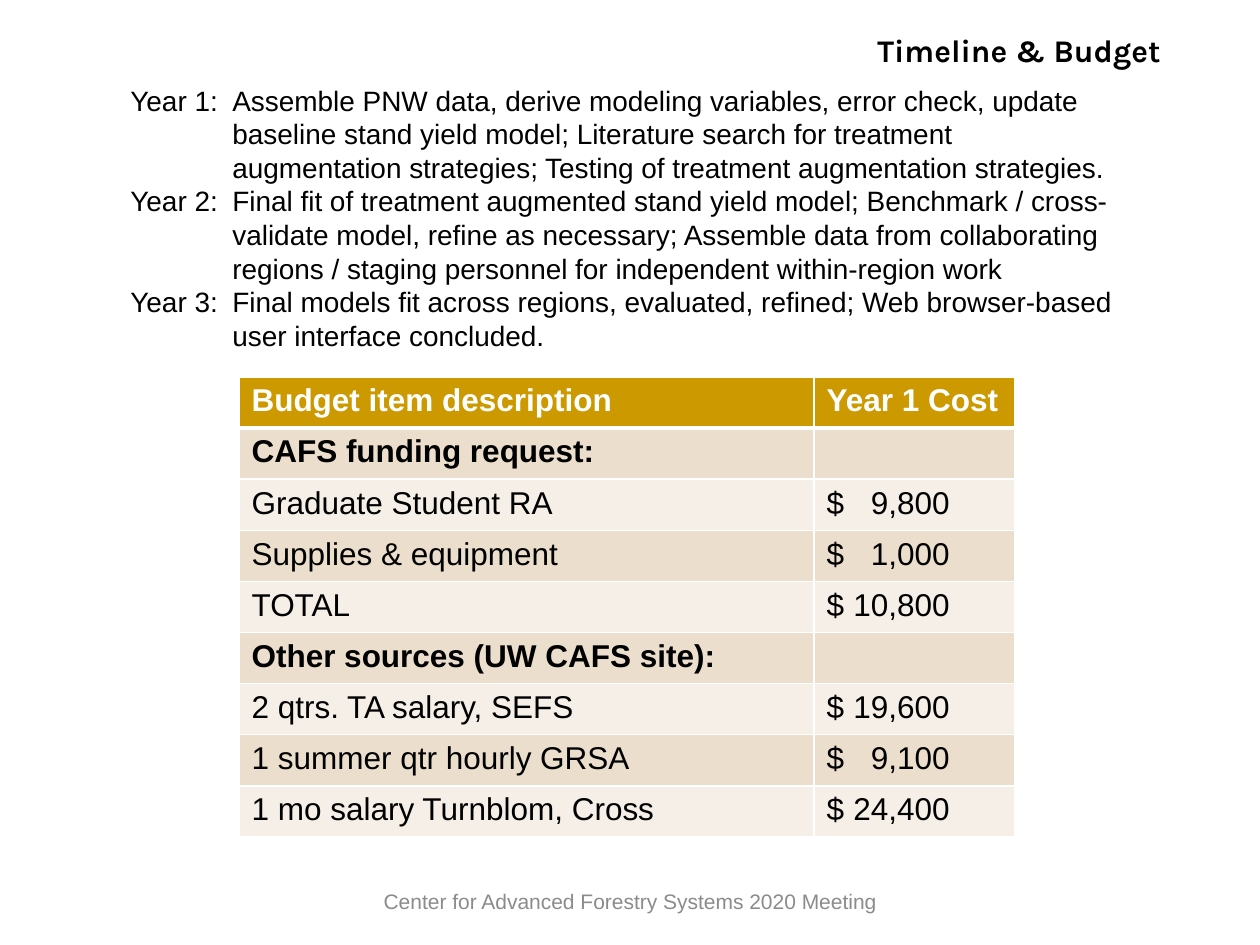
import pptx
import pptx.util
import pptx.dml.color
import pptx.enum.text
import pptx.oxml
import pptx.oxml.ns
from dataclasses import dataclass

SCALE = 914400 / 126  # EMU per px
ALIGN = pptx.enum.text.PP_ALIGN
ANCHOR = pptx.enum.text.MSO_ANCHOR
AUTO = pptx.enum.text.MSO_AUTO_SIZE
NS = pptx.oxml.ns.nsdecls("a")
HEX = {
    "ink": "000000",
    "white": "FFFFFF",
    "gray": "8B8B8B",
    "gold": "CC9900",
    "tan": "ECDECC",
    "cream": "F6EFE7",
}


@dataclass
class Box:
    left: int
    top: int
    width: int
    height: int


@dataclass
class Style:
    size: int
    color: str = "ink"
    bold: bool = False
    face: str = "Arial"


@dataclass
class Item:
    label: str
    cost: str = ""
    bold: bool = False


def emu(px: int) -> pptx.util.Emu:
    return pptx.util.Emu(round(px * SCALE))


def rgb(name: str) -> pptx.dml.color.RGBColor:
    return pptx.dml.color.RGBColor.from_string(HEX[name])


def place(box: Box) -> tuple:
    return emu(box.left), emu(box.top), emu(box.width), emu(box.height)


def format_par(par, style: Style) -> None:
    font = par.font
    font.name = style.face
    font.size = pptx.util.Pt(style.size)
    font.bold = style.bold
    font.color.rgb = rgb(style.color)


def add_text(slide, box: Box, lines: list[str], style: Style, align=ALIGN.LEFT,
             hang: int = 0, wrap: bool = True, anchor=ANCHOR.TOP):
    frame = slide.shapes.add_textbox(*place(box)).text_frame
    frame.word_wrap = wrap
    frame.vertical_anchor = anchor
    for i, line in enumerate(lines):
        par = frame.add_paragraph() if i else frame.paragraphs[0]
        par.text = line
        par.alignment = align
        if hang:
            props = par._p.get_or_add_pPr()
            props.set("marL", str(emu(hang)))
            props.set("indent", str(-emu(hang)))
        format_par(par, style)
    return frame


def add_stop(par, px: int) -> None:
    """Give the paragraph one right-aligned tab stop."""
    par._p.get_or_add_pPr().append(pptx.oxml.parse_xml(
        f'<a:tabLst {NS}><a:tab pos="{emu(px)}" algn="r"/></a:tabLst>'))


def add_edges(cell, top: int, base: int) -> None:
    props = cell._tc.get_or_add_tcPr()
    for side, pts in zip("LRTB", (1, 1, top, base)):
        props.append(pptx.oxml.parse_xml(
            f'<a:ln{side} {NS} w="{pptx.util.Pt(pts)}"><a:solidFill>'
            f'<a:srgbClr val="{HEX["white"]}"/></a:solidFill></a:ln{side}>'))


def add_budget(slide, box: Box, cols: list[int], items: list[Item], stop: int) -> None:
    table = slide.shapes.add_table(len(items), len(cols), *place(box)).table
    for col, width in zip(table.columns, cols):
        col.width = emu(width)
    for r, item in enumerate(items):
        fill = "gold" if r == 0 else ("tan" if r % 2 else "cream")
        style = Style(18, "ink" if r else "white", item.bold)
        for c, text in enumerate((item.label, item.cost)):
            cell = table.cell(r, c)
            add_edges(cell, 3 if r == 1 else 1, 3 if r == 0 else 1)
            cell.fill.solid()
            cell.fill.fore_color.rgb = rgb(fill)
            par = cell.text_frame.paragraphs[0]
            par.text = text
            if "\t" in text:
                add_stop(par, stop)
            format_par(par, style)


YEARS = [
    "Year 1:\tAssemble PNW data, derive modeling variables, error check, update "
    "baseline stand yield model; Literature search for treatment augmentation "
    "strategies; Testing of treatment augmentation strategies.",
    "Year 2:\tFinal fit of treatment augmented stand yield model; Benchmark / "
    "cross-validate model, refine as necessary; Assemble data from collaborating "
    "regions / staging personnel for independent within-region work",
    "Year 3:\tFinal models fit across regions, evaluated, refined; Web "
    "browser-based user interface concluded.",
]
ITEMS = [
    Item("Budget item description", "Year 1 Cost", True),
    Item("CAFS funding request:", bold=True),
    Item("Graduate Student RA", "$\t9,800"),
    Item("Supplies & equipment", "$\t1,000"),
    Item("TOTAL", "$\t10,800"),
    Item("Other sources (UW CAFS site):", bold=True),
    Item("2 qtrs. TA salary, SEFS", "$\t19,600"),
    Item("1 summer qtr hourly GRSA", "$\t9,100"),
    Item("1 mo salary Turnblom, Cross", "$\t24,400"),
]


def main() -> None:
    deck = pptx.Presentation()
    deck.slide_width, deck.slide_height = emu(1260), emu(945)
    slide = deck.slides.add_slide(deck.slide_layouts[6])

    # Footer and title
    add_text(slide, Box(347, 876, 567, 50),
             ["Center for Advanced Forestry Systems 2020 Meeting"],
             Style(12, "gray"), ALIGN.CENTER, anchor=ANCHOR.MIDDLE)
    add_text(slide, Box(861, 25, 312, 50), ["Timeline & Budget"],
             Style(18, bold=True, face="Karla"), ALIGN.RIGHT, wrap=False)

    # Budget table
    add_budget(slide, Box(239, 377, 776, 460), [575, 201], ITEMS, stop=123)

    # Timeline
    plan = add_text(slide, Box(118, 77, 1017, 285), YEARS, Style(16), hang=102)
    plan.auto_size = AUTO.SHAPE_TO_FIT_TEXT

    deck.save("out.pptx")


if __name__ == "__main__":
    main()
